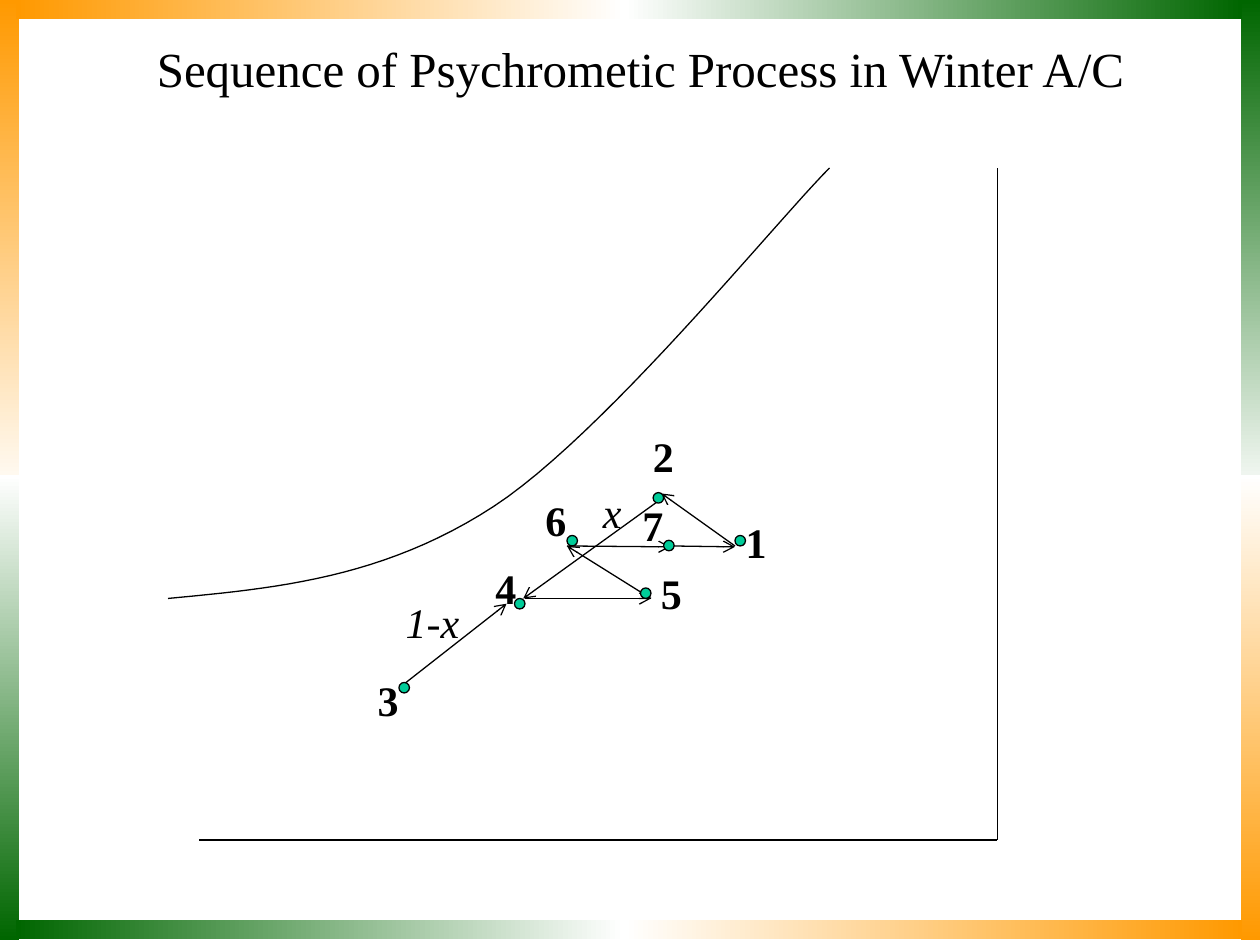
import pptx
import pptx.util
import pptx.dml.color
import pptx.enum.shapes
import pptx.enum.text
import pptx.oxml.ns
import lxml.etree

Pt = pptx.util.Pt
qn = pptx.oxml.ns.qn
FONT = "Times New Roman"
BLACK = "000000"
WHITE = "FFFFFF"
ORANGE = "FF9900"
GREEN = "006600"


def color(value):
    return pptx.dml.color.RGBColor.from_string(value)


def add_line(slide, start, end, arrow=False):
    line = slide.shapes.add_connector(
        pptx.enum.shapes.MSO_CONNECTOR.STRAIGHT, *map(Pt, start + end))
    line.line.color.rgb = color(BLACK)
    line.line.width = Pt(0.75)
    properties = line._element.spPr
    lxml.etree.SubElement(properties, qn("a:effectLst"))
    if arrow:
        tail = lxml.etree.SubElement(line.line._get_or_add_ln(), qn("a:tailEnd"))
        tail.set("type", "arrow")


deck = pptx.Presentation()
deck.slide_width = Pt(720)
deck.slide_height = Pt(540)
slide = deck.slides.add_slide(deck.slide_layouts[6])

# Gradient frame: left, top, width, height, first and last colour
frame_bars = [
    (0, 0, 11, 289.5, ORANGE, WHITE),
    (0, 271.5, 11, 265.5, WHITE, GREEN),
    (709, 0, 11, 289.5, GREEN, WHITE),
    (709, 271.5, 11, 265.5, WHITE, ORANGE),
    (9, 0, 348, 11, ORANGE, WHITE),
    (356.5, 0, 353.5, 11, WHITE, GREEN),
    (9, 525.5, 348, 11, GREEN, WHITE),
    (356.5, 525.5, 353.5, 11, WHITE, ORANGE),
]
for left, top, width, height, first, last in frame_bars:
    bar = slide.shapes.add_shape(
        pptx.enum.shapes.MSO_SHAPE.RECTANGLE, Pt(left), Pt(top), Pt(width), Pt(height))
    bar.shadow.inherit = False
    bar.line.fill.background()
    bar.fill.gradient()
    bar.fill.gradient_angle = 270 if height > width else 0
    for stop, shade in zip(bar.fill.gradient_stops, (first, last)):
        stop.color.rgb = color(shade)

# Chart axes
add_line(slide, (114, 480), (570, 480))
add_line(slide, (570, 480), (570, 96))

# Saturation curve, sampled from two cubic Bezier segments
segments = [
    ((96, 342), (157.7, 336.2), (218.9, 330.5), (282, 289.5)),
    ((282, 289.5), (344.9, 248.4), (442.1, 128.2), (474, 96)),
]
steps = 24
curve_points = []
for segment in segments:
    for step in range(1, steps + 1):
        t = step / steps
        weights = ((1 - t) ** 3, 3 * t * (1 - t) ** 2, 3 * t ** 2 * (1 - t), t ** 3)
        curve_points.append(tuple(
            Pt(sum(weight * point[axis] for weight, point in zip(weights, segment)))
            for axis in (0, 1)))
builder = slide.shapes.build_freeform(Pt(96), Pt(342))
builder.add_line_segments(curve_points, close=False)
curve = builder.convert_to_shape()
curve.shadow.inherit = False
curve.fill.background()
curve.line.color.rgb = color(BLACK)
curve.line.width = Pt(0.75)

# Process arrows
processes = [
    ((420, 312), (378, 282)),        # 1 to 2
    ((378, 285), (299, 342)),        # 2 to 4
    ((232, 390), (289.5, 345)),      # 3 to 4
    ((300, 342), (372, 342)),        # 4 to 5
    ((372, 342), (324, 312)),        # 5 to 6
    ((324, 312), (383, 312.5)),      # 6 to 7
    ((384, 312), (420, 312.5)),      # 7 to 1
]
for start, end in processes:
    add_line(slide, start, end, arrow=True)

# State points: left and top of each dot
dots = [(228, 390), (294, 342), (366, 336), (324, 306),
        (379.25, 308.75), (373.25, 281.5), (420, 306)]
for left, top in dots:
    dot = slide.shapes.add_shape(
        pptx.enum.shapes.MSO_SHAPE.OVAL, Pt(left), Pt(top), Pt(6), Pt(6))
    dot.shadow.inherit = False
    dot.fill.solid()
    dot.fill.fore_color.rgb = color("00CC99")
    dot.line.color.rgb = color(BLACK)
    dot.line.width = Pt(0.75)

# State numbers in bold, mixing fractions in italic
labels = [
    ("3", 208.75, 381.75, 26.5), ("4", 276, 318, 26.5), ("5", 370.5, 321, 26.5),
    ("6", 304.5, 279, 26.5), ("7", 360, 282, 26.5), ("2", 366, 242.75, 26.5),
    ("1", 419, 291.5, 26.5), ("x", 337.5, 274.5, 25), ("1-x", 224.75, 337.5, 46.5),
]
for text, left, top, width in labels:
    box = slide.shapes.add_textbox(Pt(left), Pt(top), Pt(width), Pt(36))
    box.text_frame.word_wrap = False
    box.text_frame.auto_size = pptx.enum.text.MSO_AUTO_SIZE.SHAPE_TO_FIT_TEXT
    box.text_frame.text = text
    font = box.text_frame.paragraphs[0].runs[0].font
    font.name = FONT
    font.size = Pt(24)
    font.bold = text.isdigit()
    font.italic = not text.isdigit()
    font.color.rgb = color(BLACK)

# Title
title = slide.shapes.add_textbox(Pt(60), Pt(-6), Pt(612), Pt(90))
title.text_frame.word_wrap = True
title.text_frame.vertical_anchor = pptx.enum.text.MSO_ANCHOR.MIDDLE
title.text_frame.text = "Sequence of Psychrometic Process in Winter A/C"
para = title.text_frame.paragraphs[0]
para.alignment = pptx.enum.text.PP_ALIGN.CENTER
span = para.runs[0]
span.font.name = FONT
span.font.size = Pt(28)
span.font.color.rgb = color(BLACK)

deck.save("out.pptx")
